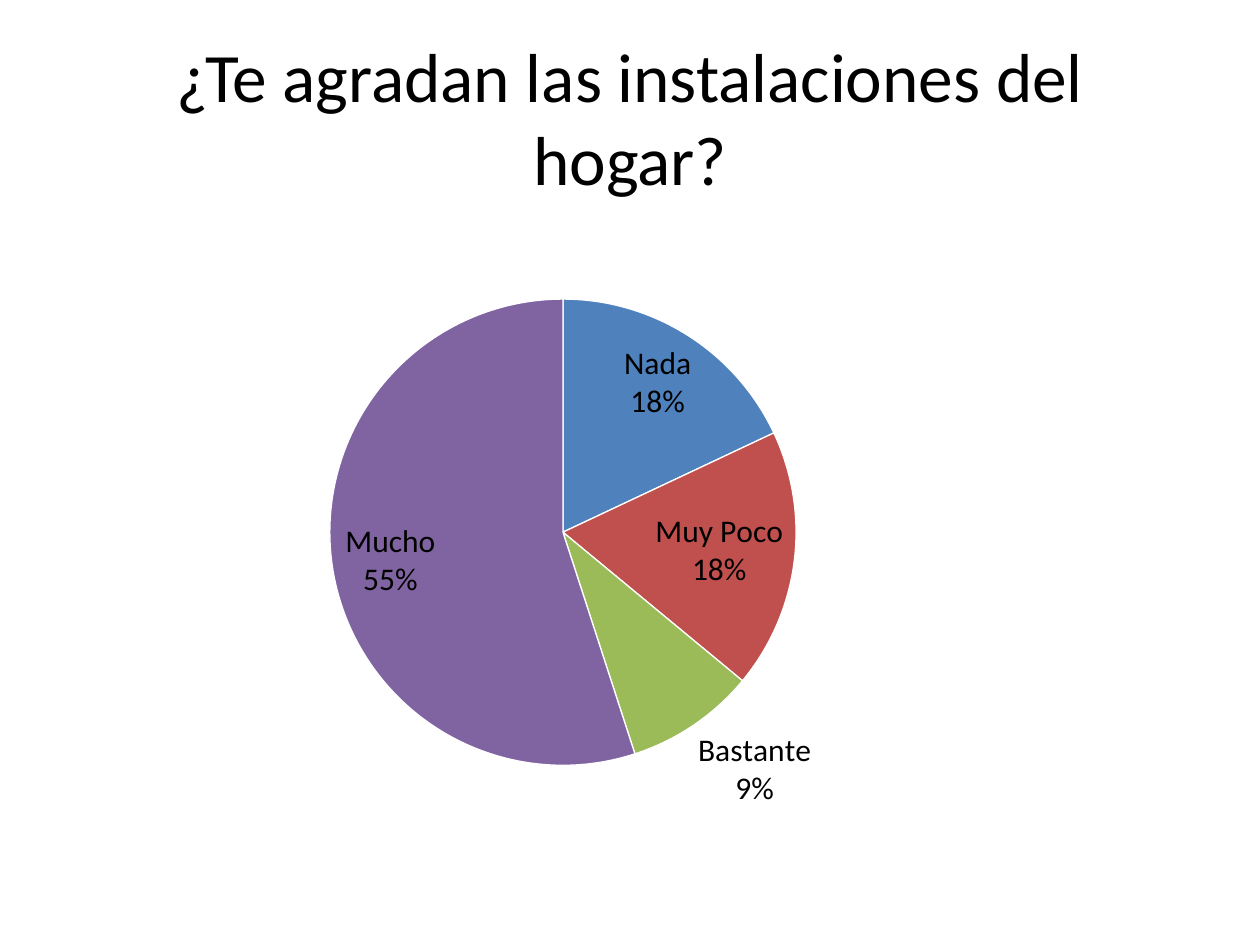
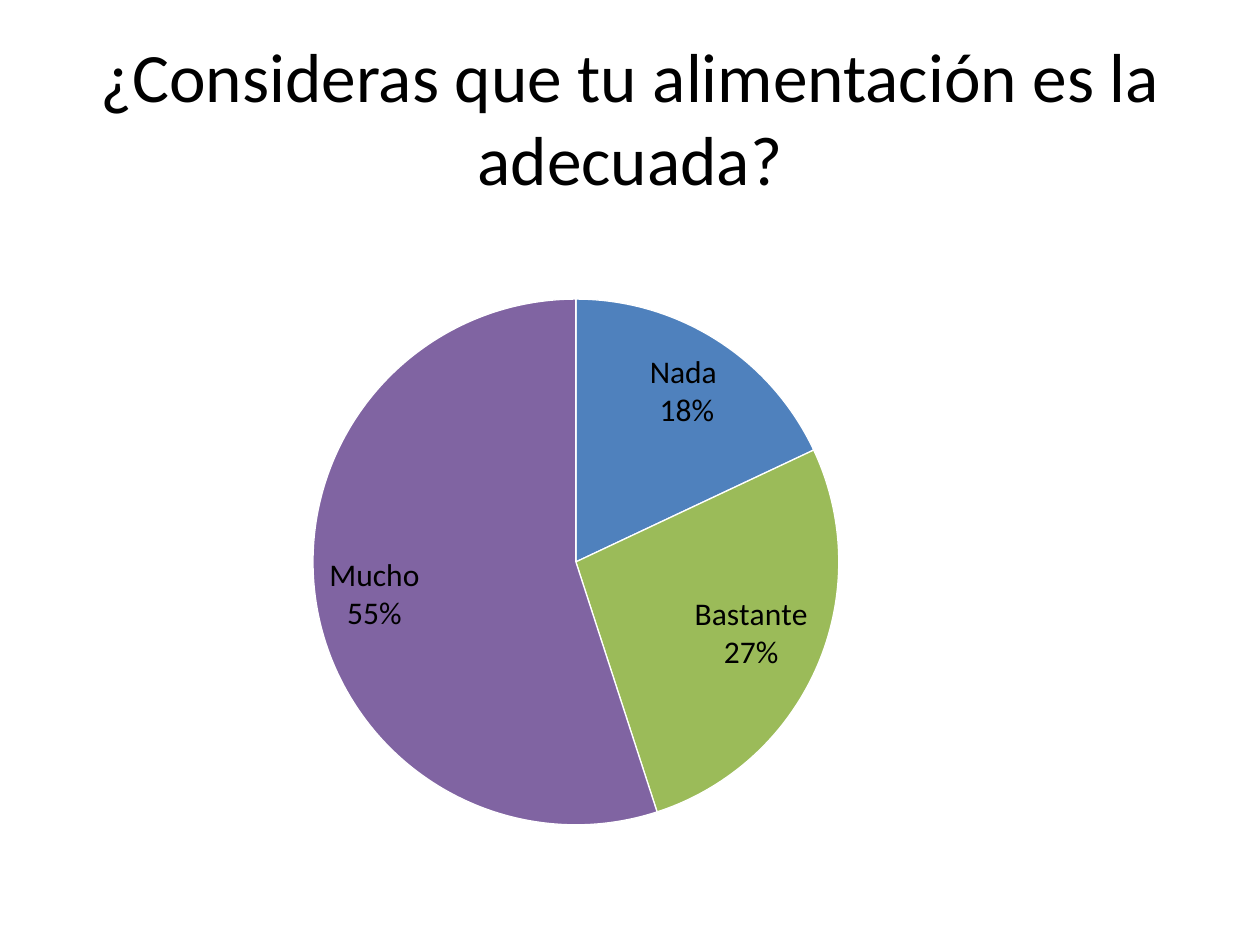
import dataclasses

import lxml.etree
import pptx
import pptx.chart.chart
import pptx.chart.data
import pptx.dml.color
import pptx.enum.chart
import pptx.enum.text
import pptx.oxml
import pptx.oxml.ns
import pptx.presentation
import pptx.slide
import pptx.text.text
import pptx.util
from pptx.util import Cm

# Shared style
FONT = "Calibri"
COLOURS = {
    "background": "FFFFFF",
    "text": "000000",
    "slice edge": "FFFFFF",
}
ANSWER_COLOURS = {
    "Nada": "4F81BD",
    "Muy Poco": "C0504D",
    "Bastante": "9BBB59",
    "Mucho": "8064A2",
}
TITLE_BOX = (Cm(1.27), Cm(0.76), Cm(22.86), Cm(3.18))
CHART_BOX = (Cm(1.27), Cm(4.45), Cm(22.86), Cm(12.57))
PIE_TOP = Cm(6.03)


@dataclasses.dataclass(frozen=True)
class Question:
    """A survey question, its answers in percent and the place of its pie."""
    title: str
    answers: dict[str, int]
    pie_left: pptx.util.Length
    pie_diameter: pptx.util.Length


QUESTIONS = [
    Question("¿Te agradan las instalaciones del hogar?",
             {"Nada": 18, "Muy Poco": 18, "Bastante": 9, "Mucho": 55},
             Cm(6.65), Cm(9.4)),
    Question("¿Consideras que tu alimentación es la adecuada?",
             {"Nada ": 18, "Muy Poco": 0, "Bastante": 27, "Mucho": 55},
             Cm(6.31), Cm(10.6)),
]


def colour(value: str) -> pptx.dml.color.RGBColor:
    return pptx.dml.color.RGBColor.from_string(value)


def style_font(font: pptx.text.text.Font, size: float) -> None:
    font.name = FONT
    font.size = pptx.util.Pt(size)
    font.color.rgb = colour(COLOURS["text"])


def write_text(frame: pptx.text.text.TextFrame, text: str, *, size: float,
               align: pptx.enum.text.PP_ALIGN,
               anchor: pptx.enum.text.MSO_ANCHOR) -> None:
    frame.word_wrap = True
    frame.auto_size = pptx.enum.text.MSO_AUTO_SIZE.NONE
    frame.vertical_anchor = anchor
    para = frame.paragraphs[0]
    para.alignment = align
    span = para.add_run()
    span.text = text
    style_font(span.font, size)


def add_title(page: pptx.slide.Slide, text: str) -> None:
    box = page.shapes.title
    box.left, box.top, box.width, box.height = TITLE_BOX
    write_text(box.text_frame, text, size=39.6,
               align=pptx.enum.text.PP_ALIGN.CENTER,
               anchor=pptx.enum.text.MSO_ANCHOR.MIDDLE)


def place_pie(chart: pptx.chart.chart.Chart, question: Question) -> None:
    """Fix the plot area, given as fractions of the chart's box."""
    left, top, width, height = CHART_BOX
    fractions = {
        "x": (question.pie_left - left) / width,
        "y": (PIE_TOP - top) / height,
        "w": question.pie_diameter / width,
        "h": question.pie_diameter / height,
    }
    tag = pptx.oxml.ns.qn
    plot_area = chart.plots[0]._element.getparent()
    for old in plot_area.findall(tag("c:layout")):
        plot_area.remove(old)
    layout = lxml.etree.Element(tag("c:layout"))
    manual = lxml.etree.SubElement(layout, tag("c:manualLayout"))
    settings = {"layoutTarget": "inner", "xMode": "edge", "yMode": "edge"}
    settings |= {name: f"{value:.4f}" for name, value in fractions.items()}
    for name, value in settings.items():
        lxml.etree.SubElement(manual, tag(f"c:{name}"), val=value)
    plot_area.insert(0, layout)


def label_slices(chart: pptx.chart.chart.Chart, question: Question) -> None:
    """Label each slice with its answer above its share; skip empty slices."""
    labels = chart.plots[0].series[0].data_labels
    labels.show_value = False
    labels.show_category_name = True
    labels.show_percentage = True
    labels.number_format = "0%"
    labels.number_format_is_linked = False
    labels.position = pptx.enum.chart.XL_LABEL_POSITION.BEST_FIT
    style_font(labels.font, 18)

    tag = pptx.oxml.ns.qn
    element = labels._element
    separator = lxml.etree.Element(tag("c:separator"))
    separator.text = "\n"
    last_flag = element.find(tag("c:showBubbleSize"))
    if last_flag is None:
        last_flag = element.find(tag("c:showPercent"))
    last_flag.addnext(separator)
    empty = [i for i, share in enumerate(question.answers.values()) if not share]
    for place, index in enumerate(empty):
        hidden = lxml.etree.Element(tag("c:dLbl"))
        lxml.etree.SubElement(hidden, tag("c:idx"), val=str(index))
        lxml.etree.SubElement(hidden, tag("c:delete"), val="1")
        element.insert(place, hidden)


def add_pie(page: pptx.slide.Slide, question: Question) -> None:
    data = pptx.chart.data.CategoryChartData()
    data.categories = list(question.answers)
    data.add_series("Series 1", list(question.answers.values()))
    chart = page.shapes.add_chart(
        pptx.enum.chart.XL_CHART_TYPE.PIE, *CHART_BOX, data).chart
    chart.has_title = False
    chart.has_legend = False
    style_font(chart.font, 18)
    chart.plots[0].vary_by_categories = True
    series = chart.plots[0].series[0]
    for index, answer in enumerate(question.answers):
        slice_format = series.points[index].format
        slice_format.fill.solid()
        slice_format.fill.fore_color.rgb = colour(ANSWER_COLOURS[answer.strip()])
        slice_format.line.color.rgb = colour(COLOURS["slice edge"])
        slice_format.line.width = pptx.util.Pt(0.75)
    place_pie(chart, question)
    label_slices(chart, question)


def add_question_page(deck: pptx.presentation.Presentation,
                      question: Question) -> None:
    page = deck.slides.add_slide(deck.slide_layouts.get_by_name("Title Only"))
    page.background.fill.solid()
    page.background.fill.fore_color.rgb = colour(COLOURS["background"])
    add_title(page, question.title)
    add_pie(page, question)


def main() -> None:
    deck = pptx.Presentation()
    deck.slide_width, deck.slide_height = Cm(25.4), Cm(19.05)
    for question in QUESTIONS:
        add_question_page(deck, question)
    deck.save("out.pptx")


if __name__ == "__main__":
    main()
